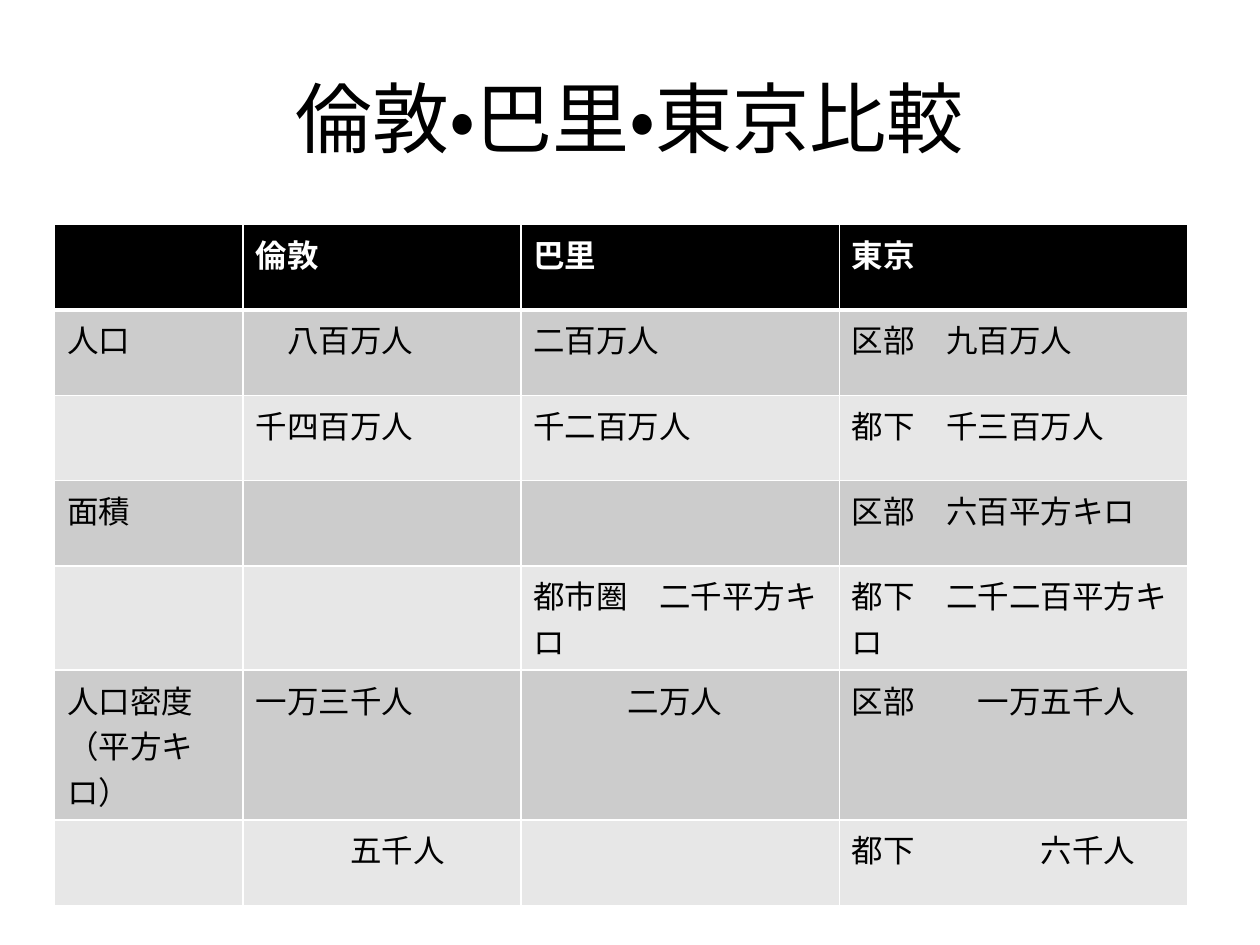
from lxml import etree
from pptx import Presentation
from pptx import util as u
from pptx.dml.color import RGBColor
from pptx.enum import lang, text
from pptx.oxml.ns import qn

HUES = {"ink": "000000", "paper": "FFFFFF", "dark": "CCCCCC", "light": "E7E7E7"}
EM = u.Pt(18)  # one full-width character of table text


class Deck:
    def __init__(self, face="Calibri"):
        self.face = face
        self.prs = Presentation()
        self.prs.slide_width, self.prs.slide_height = u.Cm(25.4), u.Cm(19.05)
        self.slide = self.prs.slides.add_slide(self.prs.slide_layouts[6])

    def style(self, para, size, hue, bold=False):
        font = para.font
        font.name, font.size, font.bold = self.face, u.Pt(size), bold
        font.language_id = lang.MSO_LANGUAGE_ID.JAPANESE
        font.color.rgb = RGBColor.from_string(HUES[hue])

    def title(self, words, x, y, w, h):
        frame = self.slide.shapes.add_textbox(
            u.Cm(x), u.Cm(y), u.Cm(w), u.Cm(h)).text_frame
        frame.word_wrap = True
        frame.vertical_anchor = text.MSO_ANCHOR.MIDDLE
        frame.text = words
        para = frame.paragraphs[0]
        para.alignment = text.PP_ALIGN.CENTER
        self.style(para, 44, "ink")

    def edge(self, cell, side, width):
        props = cell._tc.get_or_add_tcPr()
        line = etree.SubElement(props, qn("a:ln" + side), w=str(u.Pt(width)))
        fill = etree.SubElement(line, qn("a:solidFill"))
        etree.SubElement(fill, qn("a:srgbClr"), val=HUES["paper"])

    def space(self, para, indent, stop):
        props = para._p.get_or_add_pPr()
        if indent:
            props.set("marL", str(EM * indent))
        if stop:
            tabs = etree.SubElement(props, qn("a:tabLst"))
            etree.SubElement(tabs, qn("a:tab"), pos=str(EM * stop), algn="l")

    def table(self, rows, x, y, widths, highs, gaps):
        grid = self.slide.shapes.add_table(
            len(rows), len(widths), u.Cm(x), u.Cm(y),
            u.Cm(sum(widths)), u.Cm(sum(highs))).table
        grid.first_row = grid.horz_banding = False
        for col, width in zip(grid.columns, widths):
            col.width = u.Cm(width)
        for r, (row, high) in enumerate(zip(rows, highs)):
            grid.rows[r].height = u.Cm(high)
            head = r == 0
            for c, words in enumerate(row):
                cell = grid.cell(r, c)
                # White rules, heavier below the header
                for side in "LRTB":
                    thick = (r, side) in ((0, "B"), (1, "T"))
                    self.edge(cell, side, 3 if thick else 1)
                cell.fill.solid()
                band = "ink" if head else "dark" if r % 2 else "light"
                cell.fill.fore_color.rgb = RGBColor.from_string(HUES[band])
                cell.text_frame.text = words
                for para in cell.text_frame.paragraphs:
                    self.space(para, *gaps.get((r, c), (0, 0)))
                    self.style(para, 18, "paper" if head else "ink", head)


def main():
    deck = Deck()

    # Heading
    deck.title("倫敦・巴里・東京比較", 1.27, 0.76, 22.86, 3.18)

    # Comparison of the three cities
    rows = [
        ("", "倫敦", "巴里", "東京"),
        ("人口", "八百万人", "二百万人", "区部　九百万人"),
        ("", "千四百万人", "千二百万人", "都下　千三百万人"),
        ("面積", "", "", "区部　六百平方キロ"),
        ("", "", "都市圏　二千平方キロ", "都下　二千二百平方キロ"),
        ("人口密度\n（平方キロ）", "一万三千人", "二万人", "区部\t一万五千人"),
        ("", "五千人", "", "都下\t六千人"),
    ]
    # Rows of one line, then two lines, three lines and one line
    one, two, three = 1.72, 2.1, 3.02
    highs = [one] * 4 + [two, three, one]
    # (row, column): indent and tab stop, in characters
    gaps = {(1, 1): (1, 0), (5, 2): (3, 0), (6, 1): (3, 0),
            (5, 3): (0, 4), (6, 3): (0, 6)}
    deck.table(rows, 1.1, 4.53, (3.8, 5.6, 6.42, 7.03), highs, gaps)

    deck.prs.save("out.pptx")


if __name__ == "__main__":
    main()
